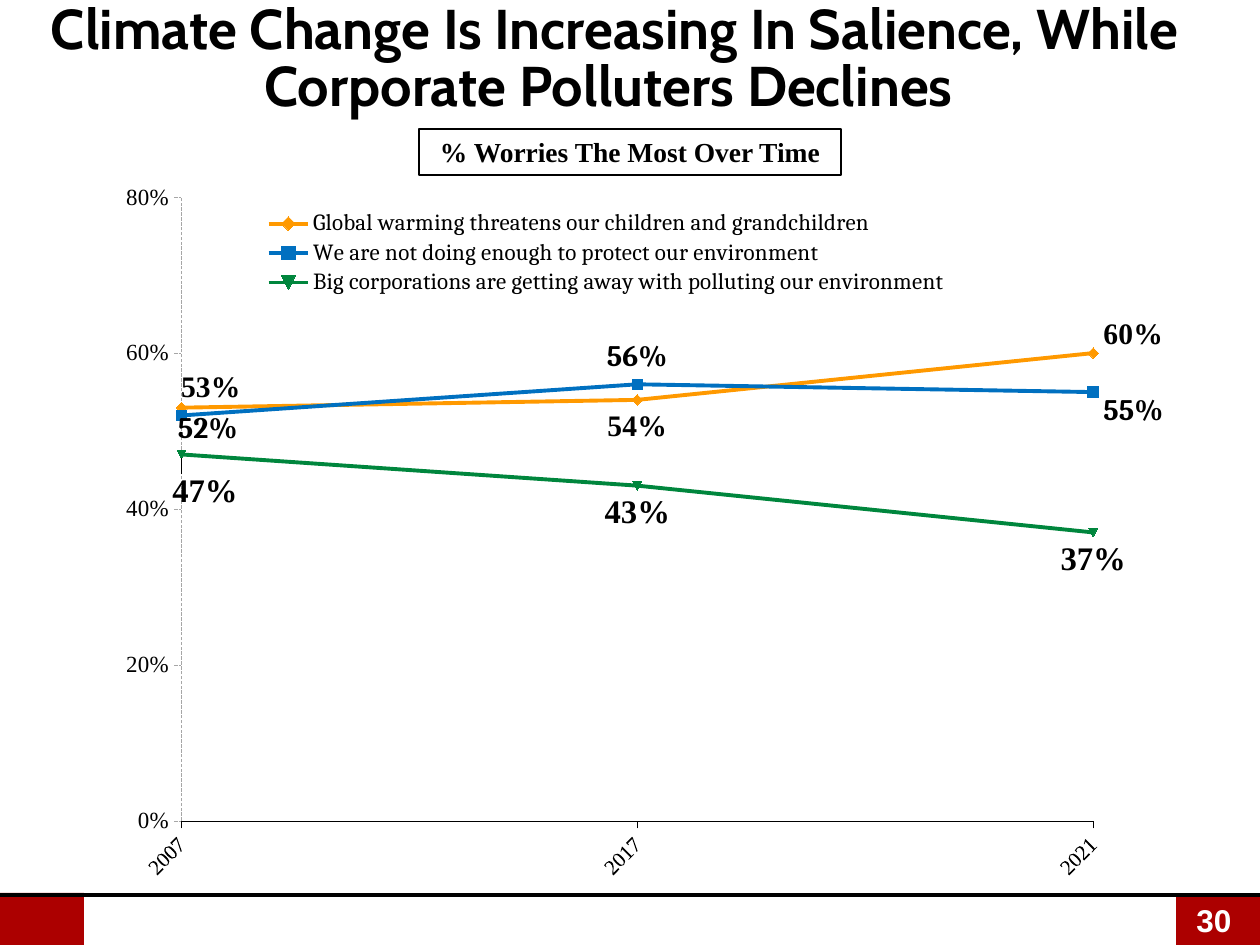
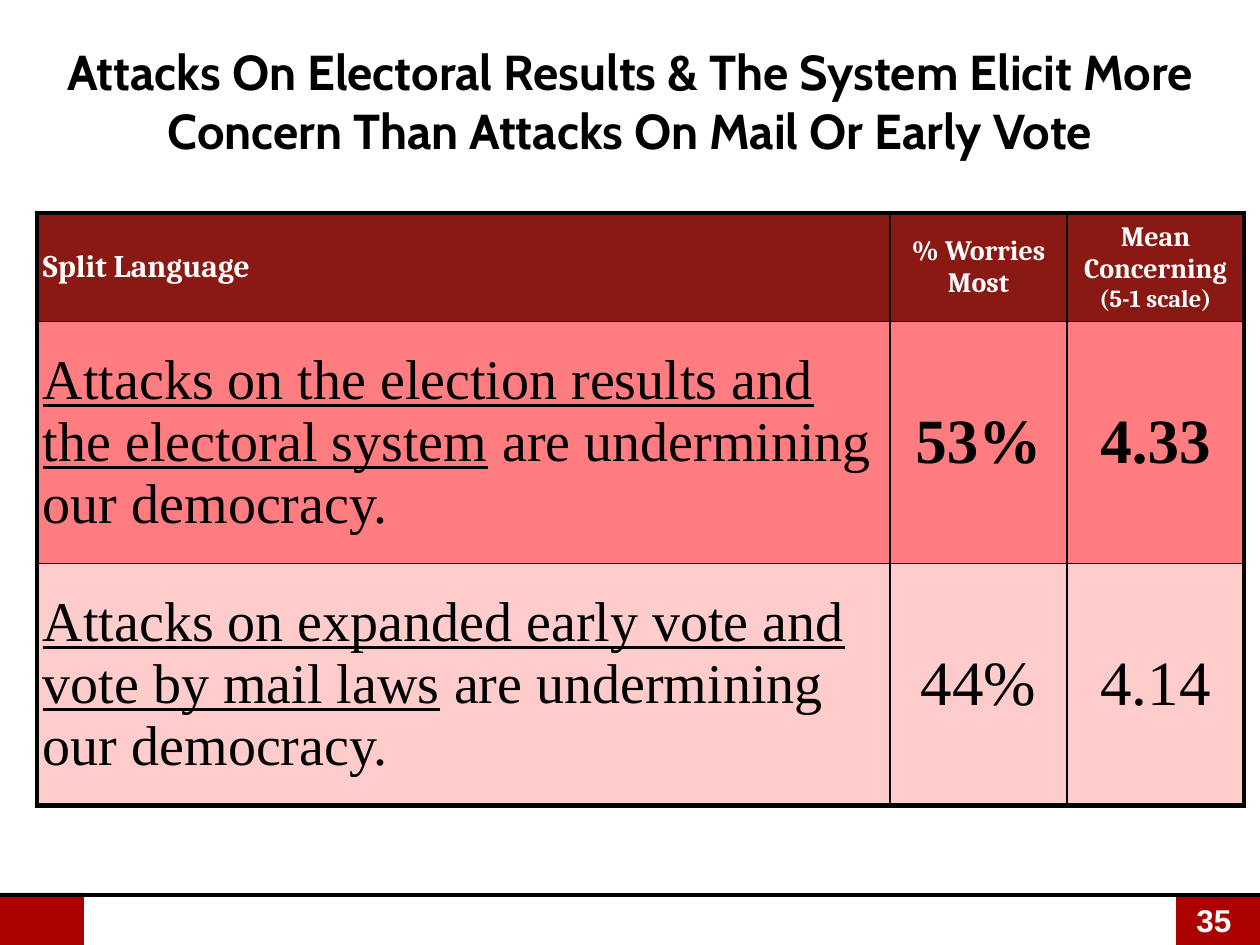
import pptx
import pptx.util
import pptx.chart.data
import pptx.dml.color
import pptx.enum.chart
import pptx.enum.dml
import pptx.enum.shapes
import pptx.enum.text
import pptx.oxml
import pptx.oxml.ns
from lxml import etree

# Content
TREND = {
    "title": "Climate Change Is Increasing In Salience, While Corporate Polluters Declines ",
    "label": "% Worries The Most Over Time",
    "page": "30",
    "years": ["2007", "2017", "2021"],
    # moved: point -> (place, right px, down px) for its value label
    "lines": [
        {"name": "Global warming threatens our children and grandchildren",
         "vals": [0.53, 0.54, 0.60], "color": "orange", "mark": "DIAMOND", "width": 6,
         "place": "BELOW", "font": "serif", "size": "value",
         "moved": {0: ("RIGHT", -11, -20), 2: ("RIGHT", 0, -19)}},
        {"name": "We are not doing enough to protect our environment",
         "vals": [0.52, 0.56, 0.55], "color": "blue", "mark": "SQUARE", "width": 6,
         "place": "ABOVE", "font": "book", "size": "value",
         "moved": {0: ("RIGHT", -14, 13), 2: ("RIGHT", 0, 19)}},
        {"name": "Big corporations are getting away with polluting our environment",
         "vals": [0.47, 0.43, 0.37], "color": "green", "mark": "AUTOMATIC", "width": 5,
         "place": "BELOW", "font": "serif", "size": "large",
         "moved": {0: ("BELOW", 24, 10)}},
    ],
}
SPLIT = {
    "title": "Attacks On Electoral Results & The System Elicit More Concern "
             "Than Attacks On Mail Or Early Vote",
    "page": "35",
    "head": ["Split Language", "% Worries Most", ("Mean Concerning", "(5-1 scale)")],
    # stressed words, the rest, share, mean, fill, bold numbers
    "rows": [
        ("Attacks on the election results and the electoral system",
         " are undermining our democracy.", "53%", "4.33", "rose", True),
        ("Attacks on expanded early vote and vote by mail laws",
         " are undermining our democracy.", "44%", "4.14", "pale", False),
    ],
    "cols": [853, 177, 177],
    "high": [108, 242, 242],
}

# Theme
THEME = {
    "color": {"black": "000000", "white": "FFFFFF", "red": "AC0000", "gray": "A6A6A6",
              "orange": "FF9900", "blue": "0070C0", "green": "00863D",
              "wine": "891912", "rose": "FF7C80", "pale": "FFCCCC"},
    "font": {"title": "Cabin", "serif": "Times New Roman", "book": "Cambria", "page": "Arial"},
    "size": {"title": 32, "title2": 28, "page": 18, "label": 15.7, "year": 12.2, "axis": 13.2,
             "value": 17, "large": 18.8, "head": 18, "head2": 16, "note": 14,
             "body": 32, "number": 36},
}
PX = 914400 / 126
WIDE, TALL = 1260, 945
ALIGN = pptx.enum.text.PP_ALIGN
MIDDLE = pptx.enum.text.MSO_ANCHOR.MIDDLE
TOP = pptx.enum.text.MSO_ANCHOR.TOP
qn = pptx.oxml.ns.qn


def px(*nums):
    return [pptx.util.Emu(round(n * PX)) for n in nums]


def color(name):
    return pptx.dml.color.RGBColor.from_string(THEME["color"][name])


def style(font, face="serif", size="body", ink="black", bold=False, under=False):
    font.name = THEME["font"][face]
    font.size = pptx.util.Pt(THEME["size"][size])
    font.color.rgb = color(ink)
    font.bold = bold
    if under:
        font.underline = True


def write(frame, *paras, align=ALIGN.LEFT, anchor=TOP, space=None, **look):
    """Each para is a string or a list of (text, changed format) runs."""
    frame.word_wrap = True
    frame.vertical_anchor = anchor
    for i, para in enumerate(paras):
        p = frame.paragraphs[0] if i == 0 else frame.add_paragraph()
        p.alignment = align
        if space:
            p.line_spacing = space
        for text, change in [(para, {})] if isinstance(para, str) else para:
            run = p.add_run()
            run.text = text
            style(run.font, **{**look, **change})


def box(slide, place, fill=None, line=None):
    shape = slide.shapes.add_shape(pptx.enum.shapes.MSO_SHAPE.RECTANGLE, *px(*place))
    shape.shadow.inherit = False
    if fill:
        shape.fill.solid()
        shape.fill.fore_color.rgb = color(fill)
    else:
        shape.fill.background()
    if line:
        shape.line.color.rgb = color("black")
        shape.line.width = pptx.util.Pt(line)
    else:
        shape.line.fill.background()
    return shape


def text(slide, place, words, **look):
    frame = slide.shapes.add_textbox(*px(*place)).text_frame
    write(frame, words, **look)


def title(slide, place, words, **look):
    text(slide, place, words, face="title", bold=True, align=ALIGN.CENTER, **look)


def start(deck, page):
    """New slide with the shared footer."""
    slide = deck.slides.add_slide(deck.slide_layouts[6])
    for left, top in ((0, 893), (WIDE - 84, 896)):
        box(slide, (left, top, 84, TALL - top), fill="red")
    rule = slide.shapes.add_connector(
        pptx.enum.shapes.MSO_CONNECTOR.STRAIGHT, *px(0, 895, WIDE, 895))
    rule.line.color.rgb = color("black")
    rule.line.width = pptx.util.Pt(2)
    etree.SubElement(rule._element.spPr, qn("a:effectLst"))
    text(slide, (1184, 895, 76, 50), page, face="page", size="page", ink="white", bold=True)
    return slide


def layout(x, y, w=None, h=None, inner=False):
    """Manual chart layout in shares of the chart; without w and h it is an offset."""
    node = etree.Element(qn("c:layout"))
    manual = etree.SubElement(node, qn("c:manualLayout"))
    parts = [("layoutTarget", "inner")] if inner else []
    if w:
        parts += [("xMode", "edge"), ("yMode", "edge")]
    parts += [("x", round(x, 3)), ("y", round(y, 3))]
    if w:
        parts += [("w", round(w, 3)), ("h", round(h, 3))]
    for tag, val in parts:
        etree.SubElement(manual, qn("c:" + tag)).set("val", str(val))
    return node


def draw_axes(chart):
    tick = pptx.enum.chart.XL_TICK_MARK
    for axis, size, ink in ((chart.category_axis, "year", "black"),
                            (chart.value_axis, "axis", "gray")):
        axis.has_major_gridlines = False
        axis.major_tick_mark, axis.minor_tick_mark = tick.OUTSIDE, tick.NONE
        axis.format.line.color.rgb = color(ink)
        axis.format.line.width = pptx.util.Pt(0.25)
        style(axis.tick_labels.font, size=size)
    years, share = chart.category_axis, chart.value_axis
    years._element.find(qn("c:txPr")).find(qn("a:bodyPr")).set("rot", "-2700000")
    share.format.line.dash_style = pptx.enum.dml.MSO_LINE.LONG_DASH
    share.minimum_scale, share.maximum_scale, share.major_unit = 0, 0.8, 0.2
    share.tick_labels.number_format = "0%"
    share.tick_labels.number_format_is_linked = False
    # Start the lines on the value axis
    for old in share._element.findall(qn("c:crossBetween")):
        share._element.remove(old)
    cross = etree.Element(qn("c:crossBetween"))
    cross.set("val", "midCat")
    share._element.find(qn("c:crosses")).addnext(cross)


def hide_leads(labels):
    """Switch off the lines from moved labels to their points."""
    more = etree.SubElement(labels._element, qn("c:extLst"))
    ext = etree.SubElement(more, qn("c:ext"))
    ext.set("uri", "{CE6537A1-D6FC-4f65-9D91-7224C49458BB}")
    space = "http://schemas.microsoft.com/office/drawing/2012/chart"
    lead = etree.SubElement(ext, "{%s}showLeaderLines" % space, nsmap={"c15": space})
    lead.set("val", "0")


def draw_line(series, row, wide, high):
    spots = pptx.enum.chart.XL_LABEL_POSITION
    series.smooth = False
    series.format.line.color.rgb = color(row["color"])
    series.format.line.width = pptx.util.Pt(2.25)
    mark = series.marker
    mark.style = pptx.enum.chart.XL_MARKER_STYLE[row["mark"]]
    mark.size = row["width"]
    mark.format.fill.solid()
    mark.format.fill.fore_color.rgb = color(row["color"])
    mark.format.line.color.rgb = color(row["color"])
    look = {"face": row["font"], "size": row["size"], "bold": True}
    labels = series.data_labels
    labels.show_value = True
    labels.number_format, labels.number_format_is_linked = "0%", False
    labels.position = spots[row["place"]]
    style(labels.font, **look)
    for i, (place, right, down) in row["moved"].items():
        label = series.points[i].data_label
        style(label.font, **look)
        label.position = spots[place]
        spot = labels._element.xpath(f"c:dLbl/c:idx[@val='{i}']")[0]
        spot.addnext(layout(right / wide, down / high))
    hide_leads(labels)


def draw_trend(slide, left, top, wide, high):
    data = pptx.chart.data.CategoryChartData(number_format="0%")
    data.categories = TREND["years"]
    for row in TREND["lines"]:
        data.add_series(row["name"], row["vals"])
    chart = slide.shapes.add_chart(pptx.enum.chart.XL_CHART_TYPE.LINE_MARKERS,
                                   *px(left, top, wide, high), data).chart
    chart.has_title = False
    style(chart.font, size="axis")
    draw_axes(chart)
    for series, row in zip(chart.plots[0].series, TREND["lines"]):
        draw_line(series, row, wide, high)
    # Legend and plot area
    chart.has_legend = True
    legend = chart.legend
    legend.position = pptx.enum.chart.XL_LEGEND_POSITION.TOP
    legend.include_in_layout = False
    style(legend.font, face="book", size="axis")
    for node in (legend._element, chart._chartSpace.chart.plotArea):
        for old in node.findall(qn("c:layout")):
            node.remove(old)
    legend._element.find(qn("c:legendPos")).addnext(
        layout((255 - left) / wide, (208 - top) / high, 710 / wide, 90 / high))
    chart._chartSpace.chart.plotArea.insert(0, layout(
        (182 - left) / wide, (197 - top) / high, 918 / wide, 624 / high, inner=True))


def edge(cell, sides):
    """Cell borders; sides holds point widths for left, right, top, bottom."""
    props = cell._tc.get_or_add_tcPr()
    for i, (side, width) in enumerate(zip("LRTB", sides)):
        line = etree.Element(qn("a:ln" + side))
        line.set("w", str(pptx.util.Pt(width)))
        fill = etree.SubElement(line, qn("a:solidFill"))
        etree.SubElement(fill, qn("a:srgbClr")).set("val", THEME["color"]["black"])
        props.insert(i, line)


def draw_split(slide, left, top):
    cols, high = SPLIT["cols"], SPLIT["high"]
    table = slide.shapes.add_table(len(high), len(cols),
                                   *px(left, top, sum(cols), sum(high))).table
    for col, size in zip(table.columns, px(*cols)):
        col.width = size
    for row, size in zip(table.rows, px(*high)):
        row.height = size

    def fill_cell(r, c, fill, *paras, **look):
        cell = table.cell(r, c)
        cell.margin_left, cell.margin_right, cell.margin_top, cell.margin_bottom = px(6, 6, 6, 6)
        cell.vertical_anchor = MIDDLE
        cell.fill.solid()
        cell.fill.fore_color.rgb = color(fill)
        edge(cell, [3 if outer else 1 for outer in
                    (c == 0, c == len(cols) - 1, r == 0, r == len(high) - 1)])
        write(cell.text_frame, *paras, anchor=MIDDLE,
              align=ALIGN.CENTER if c else ALIGN.LEFT, **look)

    for c, head in enumerate(SPLIT["head"]):
        paras = [head] if isinstance(head, str) else [head[0], [(head[1], {"size": "note"})]]
        fill_cell(0, c, "wine", *paras, face="book", ink="white", bold=True,
                  size="head2" if c else "head")
    for r, (stress, rest, share, mean, fill, bold) in enumerate(SPLIT["rows"], 1):
        fill_cell(r, 0, fill, [(stress, {"under": True}), (rest, {})])
        for c, number in enumerate((share, mean), 1):
            fill_cell(r, c, fill, number, size="number", bold=bold)


def main():
    deck = pptx.Presentation()
    deck.slide_width, deck.slide_height = px(WIDE, TALL)

    # Trend chart
    slide = start(deck, TREND["page"])
    draw_trend(slide, 92, 175, 1072, 717)
    label = box(slide, (419, 129, 422, 46), line=1.5)
    write(label.text_frame, TREND["label"], size="label", bold=True,
          align=ALIGN.CENTER, anchor=MIDDLE)
    title(slide, (0, 12, 1230, 97), TREND["title"], size="title", anchor=MIDDLE, space=0.85)

    # Split language table
    slide = start(deck, SPLIT["page"])
    draw_split(slide, 37, 213)
    title(slide, (0, 35, WIDE, 116), SPLIT["title"], size="title2")
    deck.save("out.pptx")


if __name__ == "__main__":
    main()
